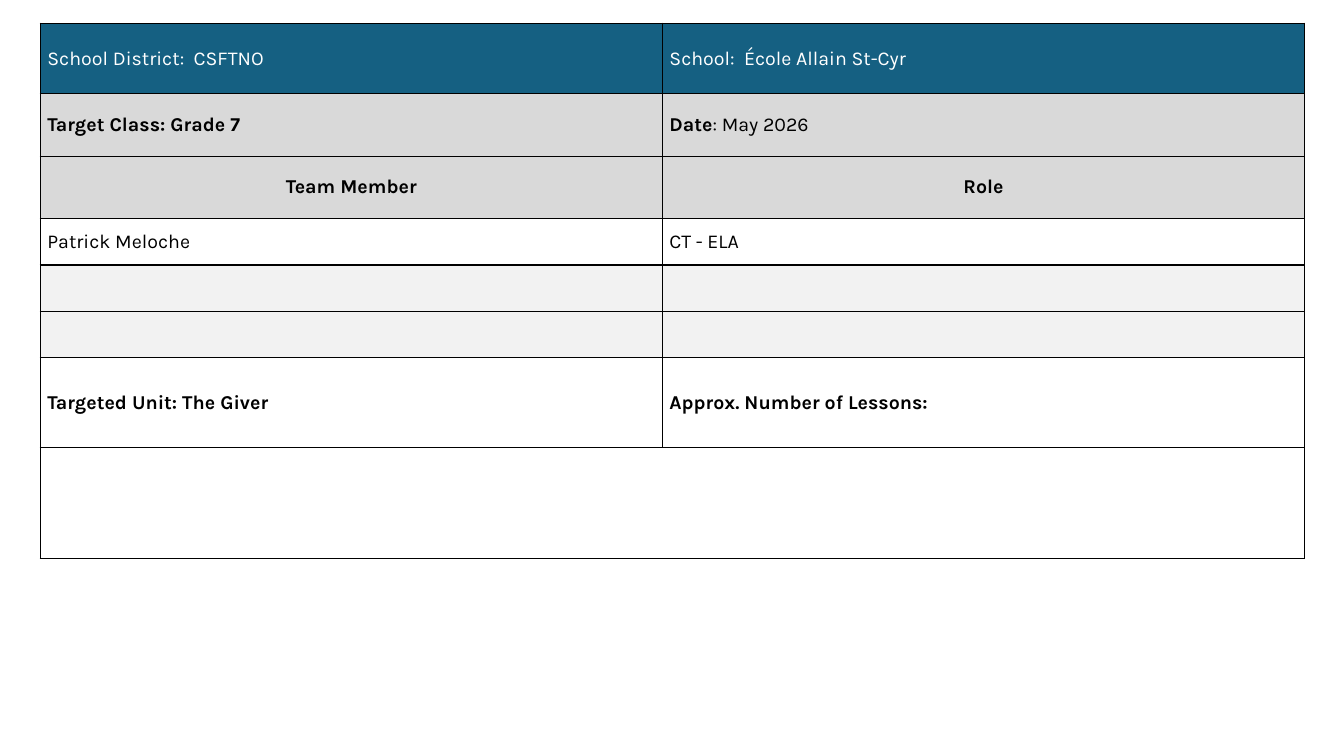
from lxml.etree import SubElement
from pptx import Presentation
from pptx.dml.color import RGBColor
from pptx.enum.text import MSO_ANCHOR, PP_ALIGN
from pptx.oxml.ns import qn
from pptx.util import Inches, Pt

HUES = {"blue": "156082", "gray": "D9D9D9", "pale": "F2F2F2",
        "white": "FFFFFF", "black": "000000"}
FONT = "Karla"
COLS = [6.17, 6.37]
ROWS = [
    (0.7, "blue", [[("School District:  CSFTNO", False)],
                   [("School:  École Allain St-Cyr", False)]]),
    (0.62, "gray", [[("Target Class: Grade 7", True)],
                    [("Date", True), (": May 2026", False)]]),
    (0.62, "gray", [[("Team Member", True)], [("Role", True)]]),
    (0.46, "white", [[("Patrick Meloche", False)], [("CT - ELA", False)]]),
    (0.46, "pale", [[], []]),
    (0.46, "pale", [[], []]),
    (0.89, "white", [[("Targeted Unit: The Giver", True)],
                     [("Approx. Number of Lessons:", True)]]),
    (1.1, "white", [[], []]),
]
HEAD = 2


def color(name):
    return RGBColor.from_string(HUES[name])


def border(cell):
    props = cell._tc.get_or_add_tcPr()
    for side in ("lnL", "lnR", "lnT", "lnB"):
        line = SubElement(props, qn(f"a:{side}"), w=str(Pt(1)))
        fill = SubElement(line, qn("a:solidFill"))
        SubElement(fill, qn("a:srgbClr"), val=HUES["black"])


def style(cell, fill):
    border(cell)
    cell.fill.solid()
    cell.fill.fore_color.rgb = color(fill)
    cell.vertical_anchor = MSO_ANCHOR.MIDDLE
    cell.margin_left = cell.margin_right = Inches(0.07)
    cell.margin_top = cell.margin_bottom = Inches(0.04)


def write(cell, runs, ink, align):
    para = cell.text_frame.paragraphs[0]
    para.alignment = align
    para.font.size = Pt(14)
    for text, bold in runs:
        run = para.add_run()
        run.text = text
        run.font.name = FONT
        run.font.size = Pt(14)
        run.font.bold = bold
        run.font.color.rgb = color(ink)


def plan(slide, left, top, width, height):
    frame = slide.shapes.add_table(len(ROWS), len(COLS), Inches(left),
                                   Inches(top), Inches(width), Inches(height))
    table = frame.table
    table.first_row = table.horz_banding = False
    for col, size in zip(table.columns, COLS):
        col.width = Inches(size)
    for i, (size, fill, cells) in enumerate(ROWS):
        table.rows[i].height = Inches(size)
        ink = "white" if fill == "blue" else "black"
        align = PP_ALIGN.CENTER if i == HEAD else PP_ALIGN.LEFT
        for j, runs in enumerate(cells):
            cell = table.cell(i, j)
            style(cell, fill)
            write(cell, runs, ink, align)
    last = len(ROWS) - 1
    table.cell(last, 0).merge(table.cell(last, 1))


def main():
    deck = Presentation()
    deck.slide_width, deck.slide_height = Inches(13.33), Inches(7.5)
    slide = deck.slides.add_slide(deck.slide_layouts[6])
    plan(slide, 0.4, 0.23, sum(COLS), sum(row[0] for row in ROWS))
    deck.save("out.pptx")


if __name__ == "__main__":
    main()
